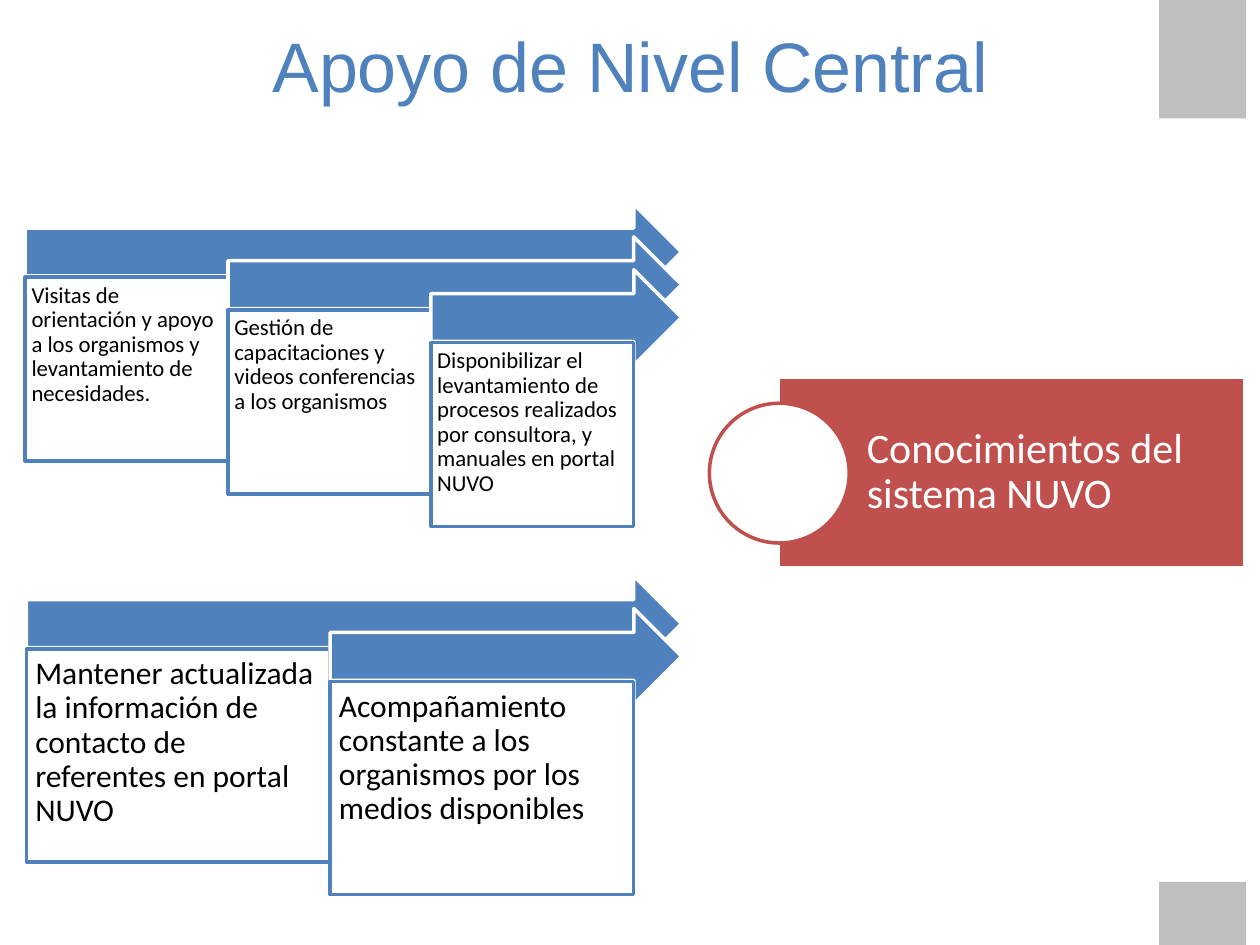
"""Build the slide on central-level support: two stepped arrow processes and their result."""
from dataclasses import dataclass

from pptx import Presentation
from pptx.dml.color import RGBColor
from pptx.enum.shapes import MSO_SHAPE
from pptx.enum.text import MSO_ANCHOR, MSO_AUTO_SIZE, PP_ALIGN
from pptx.util import Inches, Pt

RECTANGLE, OVAL, ARROW = MSO_SHAPE.RECTANGLE, MSO_SHAPE.OVAL, MSO_SHAPE.RIGHT_ARROW
TOP, MIDDLE = MSO_ANCHOR.TOP, MSO_ANCHOR.MIDDLE
LEFT, CENTER = PP_ALIGN.LEFT, PP_ALIGN.CENTER
NO_AUTOFIT = MSO_AUTO_SIZE.NONE


@dataclass(frozen=True)
class Theme:
    blue: RGBColor = RGBColor.from_string("4F81BD")
    red: RGBColor = RGBColor.from_string("C0504D")
    gray: RGBColor = RGBColor.from_string("BFBFBF")
    white: RGBColor = RGBColor.from_string("FFFFFF")
    black: RGBColor = RGBColor.from_string("000000")
    title_font: str = "Arial"
    body_font: str = "Calibri"
    title_size: int = 40
    result_size: int = 24
    large_size: int = 18
    small_size: int = 13
    outline: int = 2


THEME = Theme()

prs = Presentation()
prs.slide_width, prs.slide_height = Inches(10), Inches(7.5)
slide = prs.slides.add_slide(prs.slide_layouts[5])


def add_block(preset, left, top, width, height, fill, line=None):
    block = slide.shapes.add_shape(
        preset, Inches(left), Inches(top), Inches(width), Inches(height))
    block.shadow.inherit = False
    block.fill.solid()
    block.fill.fore_color.rgb = fill
    if line is None:
        block.line.fill.background()
    else:
        block.line.color.rgb = line
        block.line.width = Pt(THEME.outline)
    return block


def write(block, text, size, color, inset, left_inset, anchor):
    frame = block.text_frame
    frame.word_wrap = True
    frame.vertical_anchor = anchor
    frame.margin_left = Inches(left_inset)
    frame.margin_top = frame.margin_right = frame.margin_bottom = Inches(inset)
    paragraph = frame.paragraphs[0]
    paragraph.alignment = LEFT
    paragraph.line_spacing = 0.9
    run = paragraph.add_run()
    run.text = text
    run.font.name = THEME.body_font
    run.font.size = Pt(size)
    run.font.color.rgb = color


for corner_top, corner_height in ((0, 0.94), (7, 0.5)):
    add_block(RECTANGLE, 9.2, corner_top, 0.69, corner_height, THEME.gray)

title = slide.shapes.title
title.left, title.top = Inches(0), Inches(0.13)
title.width, title.height = Inches(10), Inches(0.67)
title.text_frame.auto_size = NO_AUTOFIT
title.text_frame.vertical_anchor = TOP
heading = title.text_frame.paragraphs[0]
heading.alignment = CENTER
heading_run = heading.add_run()
heading_run.text = "Apoyo de Nivel Central"
heading_run.font.name = THEME.title_font
heading_run.font.size = Pt(THEME.title_size)
heading_run.font.color.rgb = THEME.blue

result = add_block(RECTANGLE, 6.18, 2.99, 3.7, 1.52, THEME.red, THEME.white)
write(result, "Conocimientos del sistema NUVO", THEME.result_size, THEME.white, 0.05, 0.7, MIDDLE)
add_block(OVAL, 5.63, 3.2, 1.11, 1.11, THEME.white, THEME.red)

ARROW_TIP, ARROW_HEIGHT = 5.41, 0.76
STEP_DROP, BOX_DROP = 0.26, 0.58
processes = (
    (0.2, 1.62, 1.61, 1.46, THEME.small_size, 0.05, (
        "Visitas de orientación y apoyo a los organismos y levantamiento de necesidades.",
        "Gestión de capacitaciones y videos conferencias a los organismos",
        "Disponibilizar el levantamiento de procesos realizados por consultora, "
        "y manuales en portal NUVO")),
    (0.21, 4.57, 2.41, 1.69, THEME.large_size, 0.07, (
        "Mantener actualizada la información de contacto de referentes en portal NUVO",
        "Acompañamiento constante a los organismos por los medios disponibles")),
)
for start, first_top, box_width, box_height, size, inset, steps in processes:
    for index, step in enumerate(steps):
        left = start + index * box_width
        top = first_top + index * STEP_DROP
        add_block(ARROW, left, top, ARROW_TIP - left, ARROW_HEIGHT, THEME.blue, THEME.white)
        box = add_block(
            RECTANGLE, left, top + BOX_DROP, box_width, box_height, THEME.white, THEME.blue)
        write(box, step, size, THEME.black, inset, inset, TOP)

prs.save("out.pptx")
